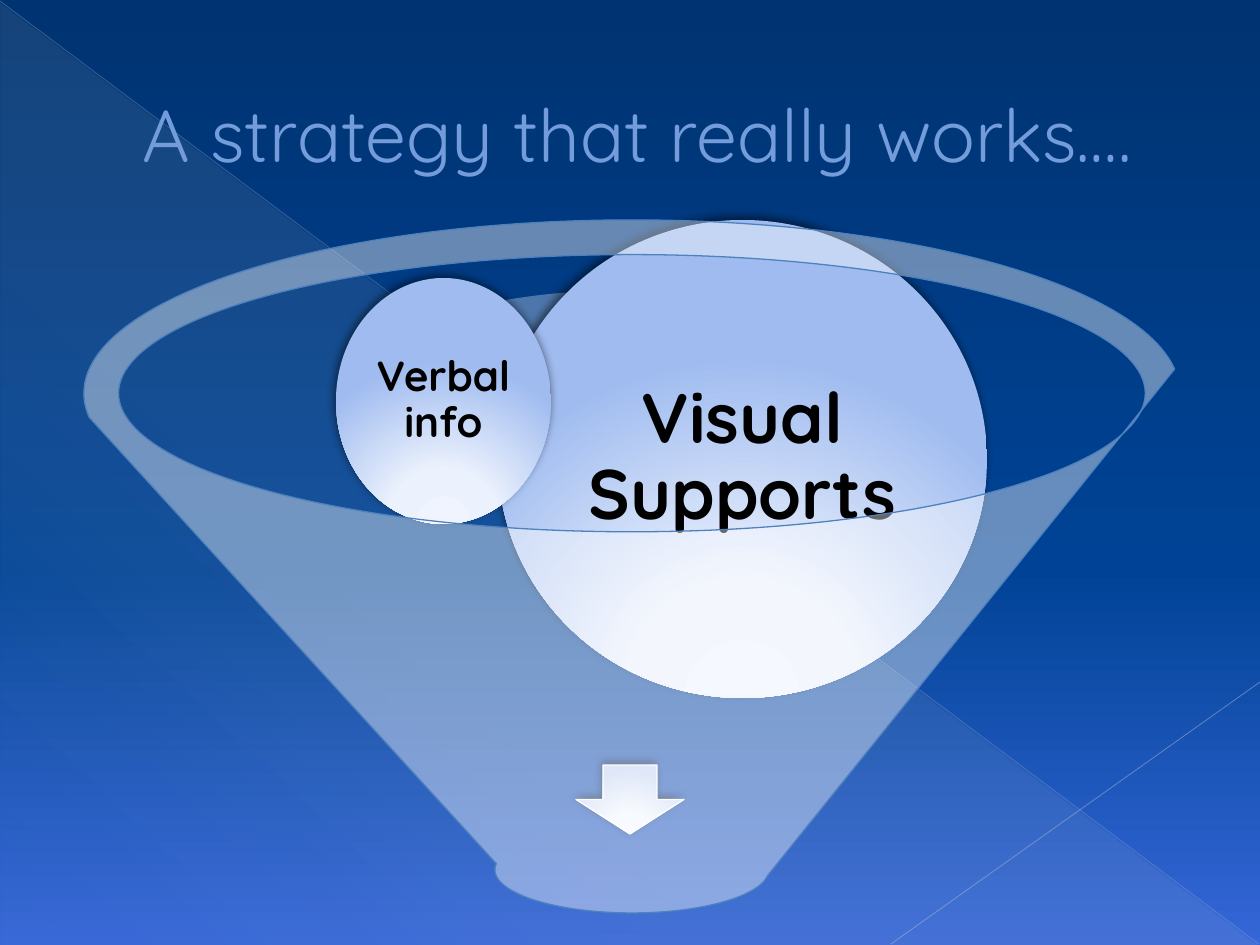
from typing import NamedTuple

from pptx import Presentation
from pptx.dml.color import RGBColor
from pptx.enum.shapes import MSO_CONNECTOR, MSO_SHAPE
from pptx.enum.text import MSO_ANCHOR, PP_ALIGN
from pptx.oxml import parse_xml
from pptx.oxml.ns import nsdecls, qn
from pptx.util import Emu, Pt

PX = 914400 / 126
FONT = "Quicksand"
COLORS = {
    "sky_top": "003371", "sky_middle": "004396", "sky_bottom": "3566D7",
    "beam": "EEECE1", "long_ray": "ADB6CE", "short_ray": "B6BED3",
    "title": "749CDB", "title_edge": "375983",
    "opening": "C2CDE1", "funnel": "FFFFFF", "funnel_edge": "4F81BD",
    "arrow_core": "F6F9FF", "arrow_mid": "F3F7FE", "arrow_rim": "CBD9F4",
    "ball_core": "EFF4FE", "ball_mid": "EBF1FD", "ball_rim": "9FBBEF",
    "white": "FFFFFF", "black": "000000",
}
LINEAR = '<a:lin ang="{}" scaled="0"/>'
GLOW = ('<a:path path="circle"><a:fillToRect l="50000" t="155000" '
        'r="50000" b="-55000"/></a:path>')


class Box(NamedTuple):
    left: int
    top: int
    width: int
    height: int


class Stop(NamedTuple):
    position: int
    color: str
    alpha: int = 100


class Ball(NamedTuple):
    label: str
    box: Box
    size: int
    inset: int


class Ray(NamedTuple):
    start: tuple[int, int]
    end: tuple[int, int]
    color: str
    width: float
    alpha: int


BALL_STOPS = [Stop(0, "ball_core"), Stop(34, "ball_mid"), Stop(100, "ball_rim")]
ARROW_STOPS = [Stop(0, "arrow_core"), Stop(34, "arrow_mid"), Stop(100, "arrow_rim")]
BALLS = [
    Ball("Visual Supports", Box(498, 220, 489, 478), 40, 8),
    Ball("Verbal info", Box(336, 278, 215, 246), 24, 4),
]
RAYS = [
    Ray((0, 1), (1259, 944), "long_ray", 0.39, 35),
    Ray((1260, 682), (891, 944), "short_ray", 0.47, 45),
]


def px(value: int) -> Emu:
    return Emu(round(value * PX))


def rgb(name: str) -> RGBColor:
    return RGBColor.from_string(COLORS[name])


def apply(target, values: dict) -> None:
    for attribute, value in values.items():
        setattr(target, attribute, value)


def set_alpha(element, alpha: int) -> None:
    """Make every solid colour inside the element translucent."""
    for color in element.iter(qn("a:srgbClr")):
        color.append(parse_xml(f'<a:alpha {nsdecls("a")} val="{alpha * 1000}"/>'))


def set_gradient(fill, owner, stops: list[Stop], direction: str) -> None:
    fill.gradient()
    stop_xml = "".join(
        f'<a:gs pos="{stop.position * 1000}"><a:srgbClr val="{COLORS[stop.color]}">'
        f'<a:alpha val="{stop.alpha * 1000}"/></a:srgbClr></a:gs>' for stop in stops)
    default = owner.find(".//" + qn("a:gradFill"))
    default.getparent().replace(default, parse_xml(
        f'<a:gradFill {nsdecls("a")} rotWithShape="1"><a:gsLst>{stop_xml}</a:gsLst>'
        f'{direction}</a:gradFill>'))


def add_plain(slide, kind: MSO_SHAPE, box: Box):
    """Add a shape without line or shadow."""
    shape = slide.shapes.add_shape(kind, *map(px, box))
    shape.shadow.inherit = False
    shape.line.fill.background()
    return shape


def add_glass(slide, kind: MSO_SHAPE, box: Box, color: str):
    shape = add_plain(slide, kind, box)
    shape.fill.solid()
    shape.fill.fore_color.rgb = rgb(color)
    set_alpha(shape.fill._xPr, 40)
    return shape


def add_glowing(slide, kind: MSO_SHAPE, box: Box, stops: list[Stop]):
    """Add a shape with a radial gradient and a soft shadow."""
    shape = add_plain(slide, kind, box)
    set_gradient(shape.fill, shape._element, stops, GLOW)
    shape._element.spPr.find(qn("a:effectLst")).append(parse_xml(
        f'<a:outerShdw {nsdecls("a")} blurRad="{Pt(5)}" dist="{Pt(2)}" '
        f'dir="{245 * 60000}" rotWithShape="0"><a:srgbClr val="{COLORS["black"]}">'
        '<a:alpha val="50000"/></a:srgbClr></a:outerShdw>'))
    return shape


def outline(shape, color: str) -> None:
    shape.line.color.rgb = rgb(color)
    shape.line.width = Pt(0.75)


def add_ray(slide, ray: Ray) -> None:
    line = slide.shapes.add_connector(
        MSO_CONNECTOR.STRAIGHT, *map(px, ray.start + ray.end))
    line.line.color.rgb = rgb(ray.color)
    line.line.width = Pt(ray.width)
    properties = line._element.spPr
    set_alpha(properties, ray.alpha)
    properties.append(parse_xml(f'<a:effectLst {nsdecls("a")}/>'))


def add_ball(slide, ball: Ball) -> None:
    shape = add_glowing(slide, MSO_SHAPE.OVAL, ball.box, BALL_STOPS)
    frame = shape.text_frame
    apply(frame, {"text": ball.label, "word_wrap": True,
                  "vertical_anchor": MSO_ANCHOR.MIDDLE})
    apply(frame, {f"margin_{side}": px(ball.inset)
                  for side in ("left", "top", "right", "bottom")})
    paragraph = frame.paragraphs[0]
    apply(paragraph, {"alignment": PP_ALIGN.CENTER, "line_spacing": 0.9})
    font = paragraph.runs[0].font
    apply(font, {"name": FONT, "size": Pt(ball.size), "bold": True})
    font.color.rgb = rgb("black")


def place_title(slide, text: str) -> None:
    title = slide.shapes.title
    slide.shapes._spTree.append(title._element)  # in front of the backdrop
    apply(title, dict(zip(Box._fields, map(px, Box(63, 37, 1134, 193)))))
    frame = title.text_frame
    apply(frame, {"text": text, "word_wrap": True,
                  "vertical_anchor": MSO_ANCHOR.MIDDLE})
    paragraph = frame.paragraphs[0]
    paragraph.alignment = PP_ALIGN.LEFT
    indents = paragraph._p.get_or_add_pPr()
    indents.set("marL", str(px(67)))
    indents.set("indent", "0")
    font = paragraph.runs[0].font
    apply(font, {"name": FONT, "size": Pt(42), "bold": False})
    font.color.rgb = rgb("title")
    font._element.insert(0, parse_xml(
        f'<a:ln {nsdecls("a")} w="{Pt(0.5)}"><a:solidFill>'
        f'<a:srgbClr val="{COLORS["title_edge"]}"/></a:solidFill></a:ln>'))


def draw_backdrop(slide) -> None:
    sky = [Stop(0, "sky_top"), Stop(60, "sky_middle"), Stop(100, "sky_bottom")]
    set_gradient(slide.background.fill, slide._element, sky,
                 LINEAR.format(90 * 60000))
    beam = add_plain(slide, MSO_SHAPE.RIGHT_TRIANGLE, Box(1, 3, 1257, 942))
    fade = [Stop(0, "beam", 10), Stop(70, "beam", 8), Stop(100, "beam", 1)]
    set_gradient(beam.fill, beam._element, fade, LINEAR.format(133 * 60000))
    for ray in RAYS:
        add_ray(slide, ray)


def draw_funnel(slide) -> None:
    add_glass(slide, MSO_SHAPE.OVAL, Box(350, 290, 558, 194), "opening")
    arrow = add_glowing(slide, MSO_SHAPE.DOWN_ARROW, Box(576, 765, 108, 69), ARROW_STOPS)
    outline(arrow, "white")
    for ball in BALLS:
        add_ball(slide, ball)
    funnel = add_glass(slide, MSO_SHAPE.FUNNEL, Box(84, 220, 1096, 693), "funnel")
    outline(funnel, "funnel_edge")


def main() -> None:
    deck = Presentation()
    apply(deck, {"slide_width": px(1260), "slide_height": px(945)})
    slide = deck.slides.add_slide(deck.slide_layouts[5])
    draw_backdrop(slide)
    place_title(slide, "A strategy that really works….")
    draw_funnel(slide)
    deck.save("out.pptx")


if __name__ == "__main__":
    main()
